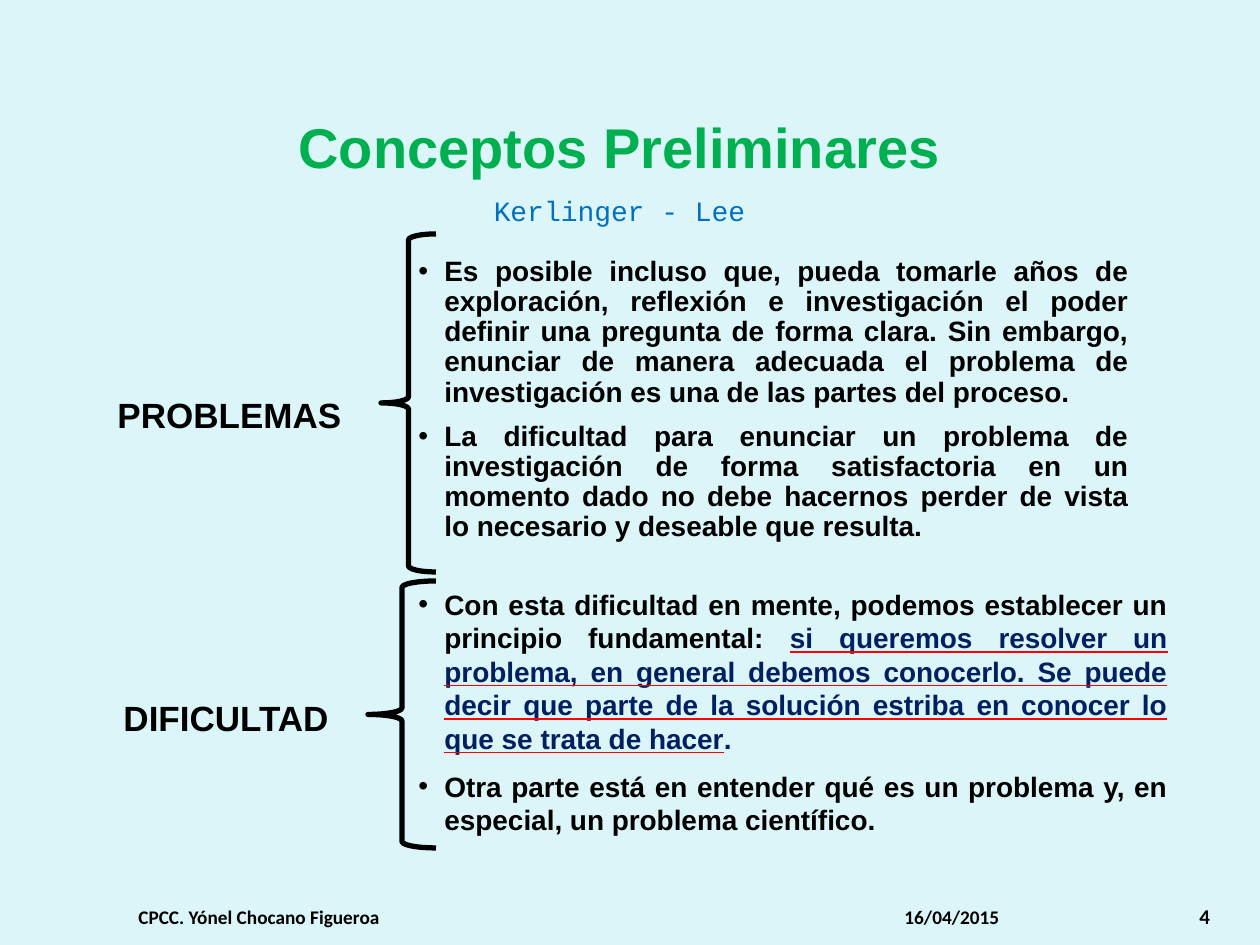
from lxml import etree
from pptx import Presentation
from pptx import util as u
from pptx.dml.color import RGBColor
from pptx.enum import shapes, text
from pptx.oxml import ns

PX_PER_INCH = 126
ALIGN = text.PP_ALIGN
BLACK, GREEN, BLUE, NAVY, RED = "000000", "00B050", "0070C0", "002060", "FF0000"

PROBLEMS = [
    [("Es posible incluso que, pueda tomarle años de exploración, reflexión e "
      "investigación el poder definir una pregunta de forma clara. Sin embargo, "
      "enunciar de manera adecuada el problema de investigación es una de las "
      "partes del proceso.", BLACK, False)],
    [("La dificultad para enunciar un problema de investigación de forma "
      "satisfactoria en un momento dado no debe hacernos perder de vista lo "
      "necesario y deseable que resulta.", BLACK, False)],
]
DIFFICULTY = [
    [("Con esta dificultad en mente, podemos establecer un principio "
      "fundamental: ", BLACK, False),
     ("si queremos resolver un problema, en general debemos conocerlo. Se puede "
      "decir que parte de la solución estriba en conocer lo que se trata de hacer",
      NAVY, True),
     (".", NAVY, False)],
    [("Otra parte está en entender qué es un problema y, en especial, un "
      "problema científico.", BLACK, False)],
]


def px(length):
    return u.Emu(round(length * 914400 / PX_PER_INCH))


def place(box):
    return [px(length) for length in box]


def color(hex_code):
    return RGBColor.from_string(hex_code)


def add_run(paragraph, words, size, hex_code=BLACK, font="Arial", bold=True):
    run = paragraph.add_run()
    run.text = words
    run.font.size = u.Pt(size)
    run.font.bold = bold
    run.font.color.rgb = color(hex_code)
    run.font.name = font
    return run


def underline(run, hex_code):
    """Underline a run in a colour other than that of its text."""
    run.font.underline = True
    line_fill = etree.Element(ns.qn("a:uFill"))
    solid = etree.SubElement(line_fill, ns.qn("a:solidFill"))
    etree.SubElement(solid, ns.qn("a:srgbClr"), val=hex_code)
    run.font._element.find(ns.qn("a:latin")).addprevious(line_fill)


def add_text_frame(parent, box, anchor=text.MSO_ANCHOR.TOP):
    frame = parent.add_textbox(*place(box)).text_frame
    frame.word_wrap = True
    frame.vertical_anchor = anchor
    return frame


def add_label(slide, box, words, align):
    paragraph = add_text_frame(slide.shapes, box).paragraphs[0]
    paragraph.alignment = align
    add_run(paragraph, words, 20)


def add_footer(slide, box, words, size):
    frame = add_text_frame(slide.shapes, box, text.MSO_ANCHOR.BOTTOM)
    add_run(frame.paragraphs[0], words, size, font="Calibri")


def set_title(slide, box):
    title = slide.shapes.title
    title.left, title.top, title.width, title.height = place(box)
    frame = title.text_frame
    frame.word_wrap = True
    frame.auto_size = text.MSO_AUTO_SIZE.NONE
    frame.vertical_anchor = text.MSO_ANCHOR.TOP
    heading, authors = frame.paragraphs[0], frame.add_paragraph()
    for paragraph in (heading, authors):
        paragraph.alignment = ALIGN.CENTER
    authors.space_before = u.Pt(8)
    add_run(heading, "Conceptos Preliminares", 32, GREEN)
    add_run(authors, "Kerlinger - Lee", 16, BLUE, "Courier New", False)


def make_bullet(paragraph, indent=26):
    properties = paragraph._p.get_or_add_pPr()
    properties.set("marL", str(px(indent)))
    properties.set("indent", str(-px(indent)))
    etree.SubElement(properties, ns.qn("a:buFont"), typeface="Arial")
    etree.SubElement(properties, ns.qn("a:buChar"), char="•")


def add_bullets(parent, box, items, line_spacing):
    frame = add_text_frame(parent, box)
    for index, item in enumerate(items):
        paragraph = frame.add_paragraph() if index else frame.paragraphs[0]
        paragraph.alignment = ALIGN.JUSTIFY
        paragraph.line_spacing = line_spacing
        paragraph.space_before = u.Pt(8)
        make_bullet(paragraph)
        for words, hex_code, underlined in item:
            run = add_run(paragraph, words, 16, hex_code)
            if underlined:
                underline(run, RED)


def add_brace(parent, box, curve):
    brace = parent.add_shape(shapes.MSO_SHAPE.LEFT_BRACE, *place(box))
    brace.adjustments[0] = curve
    brace.adjustments[1] = 0.5
    brace.fill.background()
    brace.line.color.rgb = color(BLACK)
    brace.line.width = u.Pt(3)
    brace.shadow.inherit = False


def add_braced_list(slide, list_box, items, line_spacing, brace_box, curve):
    group = slide.shapes.add_group_shape()
    add_bullets(group.shapes, list_box, items, line_spacing)
    add_brace(group.shapes, brace_box, curve)


def main():
    deck = Presentation()
    deck.slide_width, deck.slide_height = px(1260), px(945)
    slide = deck.slides.add_slide(deck.slide_layouts[5])
    slide.background.fill.solid()
    slide.background.fill.fore_color.rgb = color("DBF5F9")

    set_title(slide, (231, 106, 777, 233))
    add_label(slide, (91, 387, 277, 54), "PROBLEMAS", ALIGN.CENTER)
    add_label(slide, (54, 690, 287, 54), "DIFICULTAD", ALIGN.RIGHT)
    add_braced_list(slide, (406, 251, 735, 305), PROBLEMS, 0.9,
                    (381, 234, 55, 338), 0.11)
    add_braced_list(slide, (406, 581, 774, 267), DIFFICULTY, 1.0,
                    (368, 581, 68, 267), 0.095)

    add_footer(slide, (892, 885, 294, 50), "16/04/2015", 11)
    add_footer(slide, (126, 885, 766, 50), "CPCC. Yónel Chocano Figueroa", 11)
    add_footer(slide, (1187, 885, 63, 50), "4", 12)
    deck.save("out.pptx")


if __name__ == "__main__":
    main()
